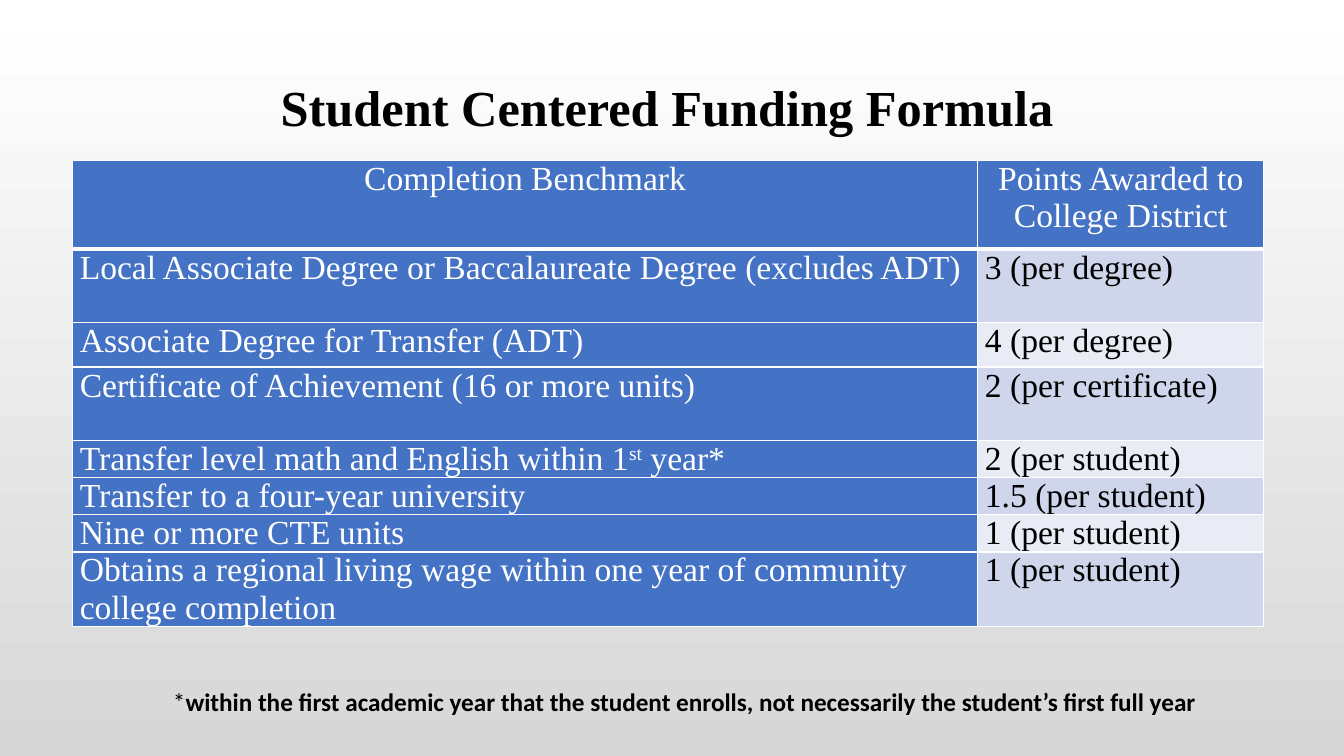
"""Build the Student Centered Funding Formula slide."""
from lxml.etree import SubElement
from pptx import Presentation
from pptx.dml.color import RGBColor
from pptx.enum.text import MSO_ANCHOR, PP_ALIGN
from pptx.oxml.ns import qn
from pptx.util import Cm, Pt

TITLE = "Student Centered Funding Formula"
HEADER = ("Completion Benchmark", "Points Awarded to College District")
BENCHMARKS = [
    ("Local Associate Degree or Baccalaureate Degree (excludes ADT)", "3 (per degree)", 1.85),
    ("Associate Degree for Transfer (ADT)", "4 (per degree)", 1.12),
    ("Certificate of Achievement (16 or more units)", "2 (per certificate)", 1.85),
    (("Transfer level math and English within 1", "st", " year*"), "2 (per student)", 0.92),
    ("Transfer to a four-year university", "1.5 (per student)", 0.92),
    ("Nine or more CTE units", "1 (per student)", 0.92),
    ("Obtains a regional living wage within one year of community college completion",
     "1 (per student)", 1.85),
]
FOOTNOTE = [
    ("*", False),
    ("within the first academic year that the student enrolls, "
     "not necessarily the student’s first full year", True),
]
HEADER_HEIGHT = 2.24
COLUMN_WIDTHS = (22.81, 7.21)
BLUE, WHITE, BLACK = "4472C4", "FFFFFF", "000000"
BANDS = ("CFD5EA", "E9EBF5")
SERIF, SANS = "Times New Roman", "Calibri"


def color(value):
    return RGBColor.from_string(value)


def add_run(para, text, font, size, ink, bold=False):
    span = para.add_run()
    span.text = text
    span.font.name = font
    span.font.size = Pt(size)
    span.font.bold = bold
    span.font.color.rgb = color(ink)
    return span


def add_borders(cell, bottom):
    properties = cell._tc.get_or_add_tcPr()
    for side, width in (("L", 1), ("R", 1), ("T", 1), ("B", bottom)):
        line = SubElement(properties, qn(f"a:ln{side}"), w=str(Pt(width)))
        fill = SubElement(line, qn("a:solidFill"))
        SubElement(fill, qn("a:srgbClr"), val=WHITE)


def fill_cell(cell, content, fill, ink, align, bottom=1):
    add_borders(cell, bottom)
    cell.fill.solid()
    cell.fill.fore_color.rgb = color(fill)
    cell.margin_left = cell.margin_right = Cm(0.18)
    cell.margin_top = cell.margin_bottom = 0
    para = cell.text_frame.paragraphs[0]
    para.alignment = align
    for text in (content,) if isinstance(content, str) else content:
        span = add_run(para, text, SERIF, 24, ink)
        if text == "st":
            span.font._element.set("baseline", "30000")


def set_background(page):
    fill = page.background.fill
    fill.gradient()
    fill.gradient_angle = 270
    for stop, shade in zip(fill.gradient_stops, (WHITE, "D7D7D7")):
        stop.color.rgb = color(shade)


def add_title(page):
    title = page.shapes.title
    title.left, title.top, title.width, title.height = Cm(4.52), Cm(1.9), Cm(24.59), Cm(1.73)
    title.text_frame.vertical_anchor = MSO_ANCHOR.MIDDLE
    para = title.text_frame.paragraphs[0]
    para.alignment = PP_ALIGN.CENTER
    para.line_spacing = 0.9
    add_run(para, TITLE, SERIF, 36, BLACK, True)


def add_benchmark_table(page):
    heights = [HEADER_HEIGHT] + [height for _, _, height in BENCHMARKS]
    table = page.shapes.add_table(
        len(heights), len(HEADER), Cm(1.83), Cm(4.04),
        Cm(sum(COLUMN_WIDTHS)), Cm(sum(heights))).table
    for column, width in zip(table.columns, COLUMN_WIDTHS):
        column.width = Cm(width)
    for row, height in zip(table.rows, heights):
        row.height = Cm(height)
    for index, text in enumerate(HEADER):
        fill_cell(table.cell(0, index), text, BLUE, WHITE, PP_ALIGN.CENTER, 3)
    for index, (benchmark, points, _) in enumerate(BENCHMARKS):
        fill_cell(table.cell(index + 1, 0), benchmark, BLUE, WHITE, PP_ALIGN.LEFT)
        fill_cell(table.cell(index + 1, 1), points, BANDS[index % 2], BLACK, PP_ALIGN.LEFT)


def add_footnote(page):
    box = page.shapes.add_textbox(Cm(4.11), Cm(17.17), Cm(26.47), Cm(1.02))
    box.text_frame.word_wrap = False
    para = box.text_frame.paragraphs[0]
    for text, bold in FOOTNOTE:
        add_run(para, text, SANS, 18, BLACK, bold)


def main():
    deck = Presentation()
    deck.slide_width, deck.slide_height = Cm(33.87), Cm(19.05)
    page = deck.slides.add_slide(deck.slide_layouts[5])
    set_background(page)
    add_title(page)
    add_benchmark_table(page)
    add_footnote(page)
    deck.save("out.pptx")


if __name__ == "__main__":
    main()
